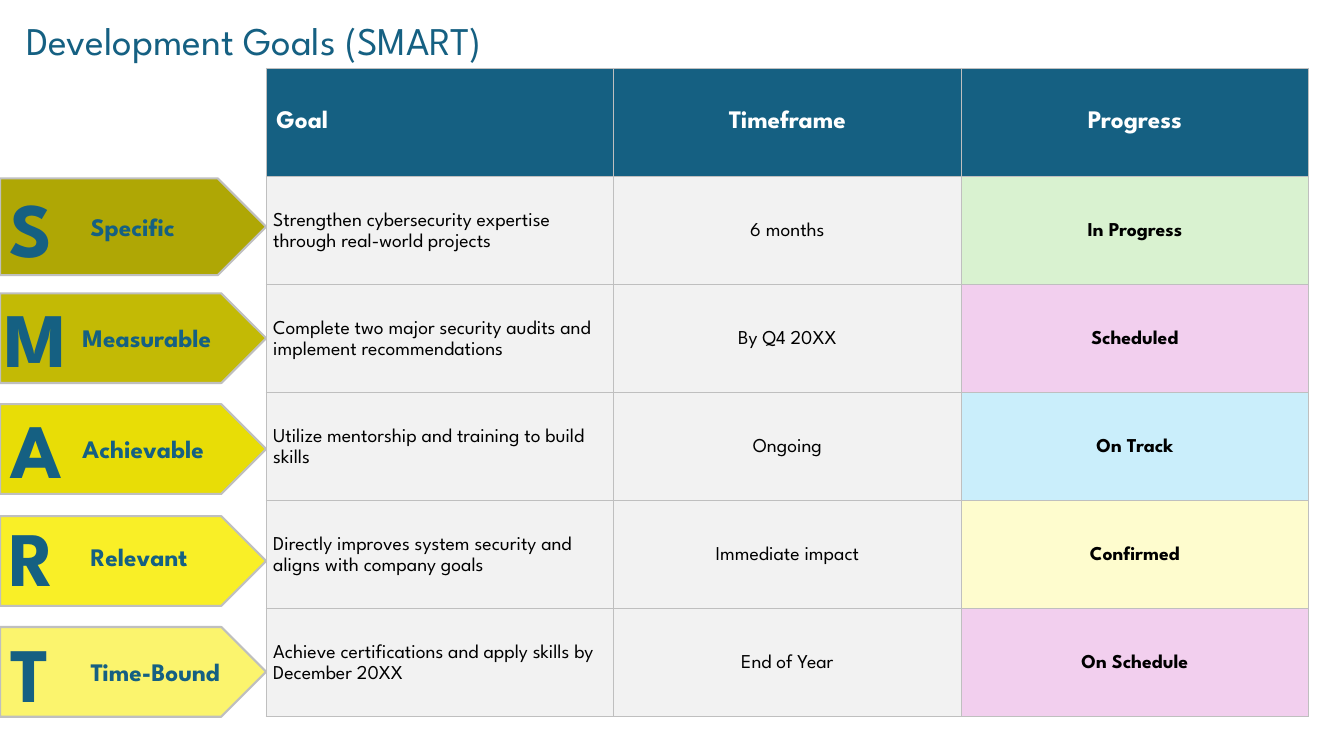
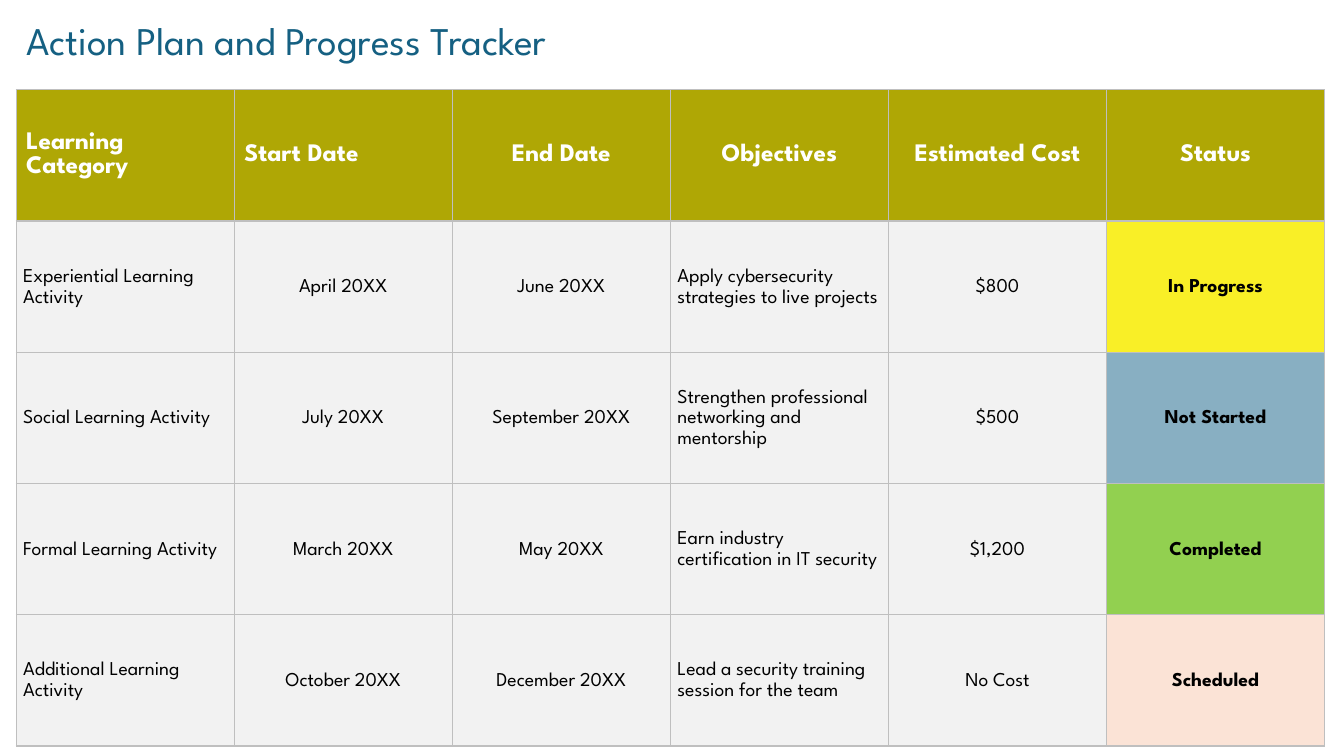
"""Builds a SMART goals slide and an action plan slide, each around a status table."""
from lxml import etree
from pptx import Presentation
from pptx.dml.color import RGBColor
from pptx.enum import shapes, text
from pptx.oxml import ns
from pptx.util import Inches, Pt

COLOURS = {
    "blue": "156082", "olive": "AFA705", "moss": "C3BA05", "gold": "E8DD06",
    "yellow": "F9EF27", "lemon": "FBF46D", "grey": "F2F2F2", "rule": "BFBFBF",
    "white": "FFFFFF", "black": "000000", "mint": "D9F2D0", "pink": "F2CFEE",
    "sky": "CAEEFB", "cream": "FEFCCE", "steel": "88AFC2", "green": "92D050",
    "peach": "FBE3D6",
}
LEFT, CENTRE = text.PP_ALIGN.LEFT, text.PP_ALIGN.CENTER
TITLE = {"size": Pt(28), "bold": False}
LABEL = {"size": Pt(18), "bold": True}
LETTER = {"size": Pt(55), "bold": True}
BODY = {"size": Pt(14), "bold": False}
STATUS = {"size": Pt(14), "bold": True}
BODY_PARA = {"line_spacing": 1.15, "space_after": Pt(8)}
BODY_MARGINS = {"margin_left": Inches(0.07), "margin_right": Inches(0.07),
                "margin_top": 0, "margin_bottom": 0}


def write(frame, content, colour, font, para_format):
    para = frame.paragraphs[0]
    for name, value in para_format.items():
        setattr(para, name, value)
    span = para.add_run()
    span.text = content
    for name, value in {"name": "League Spartan", **font}.items():
        setattr(span.font, name, value)
    span.font.color.rgb = RGBColor.from_string(COLOURS[colour])


def add_status_table(page, place, header_colour, left_headers, left_columns, rows, statuses):
    grid = page.shapes.add_table(len(rows), len(rows[0]), *map(Inches, place)).table
    grid.horz_banding = False
    for row_index, row in enumerate(rows):
        for column, content in enumerate(row):
            cell = grid.cell(row_index, column)
            cell.vertical_anchor = text.MSO_ANCHOR.MIDDLE
            if row_index == 0:
                fill, colour, font, para_format = header_colour, "white", LABEL, {}
                left = left_headers
            else:
                is_status = column == len(row) - 1
                fill = statuses[row_index - 1] if is_status else "grey"
                colour, font, para_format = "black", STATUS if is_status else BODY, BODY_PARA
                left = left_columns
                for name, value in BODY_MARGINS.items():
                    setattr(cell, name, value)
            align = LEFT if column in left else CENTRE
            write(cell.text_frame, content, colour, font, {"alignment": align, **para_format})
            cell.fill.solid()
            cell.fill.fore_color.rgb = RGBColor.from_string(COLOURS[fill])
            properties = cell._tc.get_or_add_tcPr()
            for position, side in enumerate(("lnL", "lnR", "lnT", "lnB")):
                border = etree.Element(ns.qn(f"a:{side}"), w=str(Pt(1)))
                solid = etree.SubElement(border, ns.qn("a:solidFill"))
                etree.SubElement(solid, ns.qn("a:srgbClr"), val=COLOURS["rule"])
                properties.insert(position, border)


deck = Presentation()
deck.slide_width, deck.slide_height = Inches(13.33), Inches(7.5)

goals_page, plan_page = [deck.slides.add_slide(deck.slide_layouts[6]) for _ in range(2)]
captions = [
    (goals_page, (0.16, 0.11, 8.08, 0.57), "Development Goals (SMART)", TITLE),
    (plan_page, (0.16, 0.11, 8.08, 0.57), "Action Plan and Progress Tracker", TITLE),
]

arrows = [
    ("Specific", "olive", 1.77, 0.96, (0.8, 2.05), (0, 1.74)),
    ("Measurable", "moss", 2.91, 0.89, (0.72, 3.15), (-0.05, 2.83)),
    ("Achievable", "gold", 4.01, 0.89, (0.72, 4.25), (0.01, 3.93)),
    ("Relevant", "yellow", 5.12, 0.89, (0.8, 5.32), (0, 5.01)),
    ("Time-Bound", "lemon", 6.22, 0.89, (0.8, 6.46), (0.01, 6.16)),
]
for label, colour, top, height, label_at, letter_at in arrows:
    arrow = goals_page.shapes.add_shape(
        shapes.MSO_SHAPE.PENTAGON, 0, Inches(top), Inches(2.64), Inches(height))
    arrow.shadow.inherit = False
    arrow.fill.solid()
    arrow.fill.fore_color.rgb = RGBColor.from_string(COLOURS[colour])
    arrow.line.color.rgb = RGBColor.from_string(COLOURS["rule"])
    arrow.line.width = Pt(1.5)
    captions.append((goals_page, (*label_at, 1.97, 0.4), label, LABEL))
    captions.append((goals_page, (*letter_at, 0.67, 1.03), label[0], LETTER))

goals = [
    ("Goal", "Timeframe", "Progress"),
    ("Strengthen cybersecurity expertise through real-world projects", "6 months", "In Progress"),
    ("Complete two major security audits and implement recommendations", "By Q4 20XX",
     "Scheduled"),
    ("Utilize mentorship and training to build skills", "Ongoing", "On Track"),
    ("Directly improves system security and aligns with company goals", "Immediate impact",
     "Confirmed"),
    ("Achieve certifications and apply skills by December 20XX", "End of Year", "On Schedule"),
]
add_status_table(goals_page, (2.64, 0.68, 10.34, 6.43), "blue", {0}, {0}, goals,
                 ["mint", "pink", "sky", "cream", "pink"])

activities = [
    ("Learning Category", "Start Date", "End Date", "Objectives", "Estimated Cost", "Status"),
    ("Experiential Learning Activity", "April 20XX", "June 20XX",
     "Apply cybersecurity strategies to live projects", "$800", "In Progress"),
    ("Social Learning Activity", "July 20XX", "September 20XX",
     "Strengthen professional networking and mentorship", "$500", "Not Started"),
    ("Formal Learning Activity", "March 20XX", "May 20XX",
     "Earn industry certification in IT security", "$1,200", "Completed"),
    ("Additional Learning Activity", "October 20XX", "December 20XX",
     "Lead a security training session for the team", "No Cost", "Scheduled"),
]
add_status_table(plan_page, (0.16, 0.89, 12.98, 6.51), "olive", {0, 1}, {0, 3}, activities,
                 ["yellow", "steel", "green", "peach"])

for page, place, content, font in captions:
    box = page.shapes.add_textbox(*map(Inches, place))
    box.text_frame.word_wrap = True
    box.text_frame.auto_size = text.MSO_AUTO_SIZE.SHAPE_TO_FIT_TEXT
    write(box.text_frame, content, "blue", font, {"alignment": LEFT})

deck.save("out.pptx")
